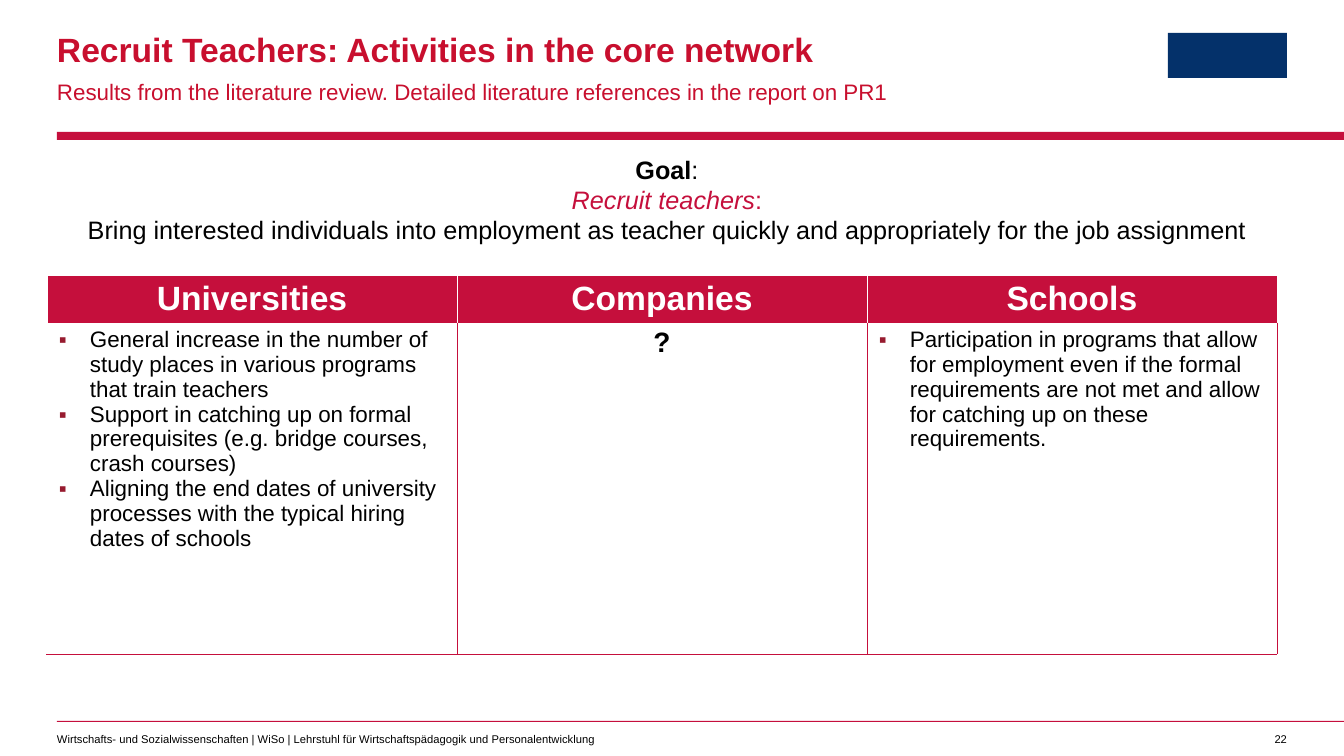
"""Build the slide on recruiting teachers in the core network."""
from dataclasses import dataclass

from lxml.etree import SubElement
from pptx import Presentation
from pptx.dml.color import RGBColor
from pptx.enum.shapes import MSO_SHAPE
from pptx.enum.text import MSO_ANCHOR, PP_ALIGN
from pptx.oxml.ns import qn
from pptx.util import Emu, Pt

RED = RGBColor(0xC5, 0x0F, 0x3C)
TITLE_RED = RGBColor(0xC8, 0x0F, 0x2E)
BULLET_RED = RGBColor(0x97, 0x1B, 0x2F)
NAVY = RGBColor(0x04, 0x31, 0x6A)
BLACK = RGBColor(0, 0, 0)
WHITE = RGBColor(0xFF, 0xFF, 0xFF)
FONT = "Arial"


@dataclass(frozen=True)
class Box:
    left: int
    top: int
    width: int
    height: int


@dataclass(frozen=True)
class Bar:
    box: Box
    color: RGBColor


@dataclass(frozen=True)
class Run:
    text: str
    size: int
    color: RGBColor = BLACK
    bold: bool = False
    italic: bool = False


@dataclass(frozen=True)
class Column:
    heading: str
    items: tuple[str, ...]
    bulleted: bool = True


@dataclass(frozen=True)
class Border:
    side: str
    color: RGBColor
    width: float


BARS = (
    Bar(Box(57, 132, 1287, 8), RED),
    Bar(Box(57, 721, 1287, 1), RED),
    Bar(Box(1168, 33, 119, 45), NAVY),
)
COLUMNS = (
    Column("Universities", (
        "General increase in the number of study places in various programs that train teachers",
        "Support in catching up on formal prerequisites (e.g. bridge courses, crash courses)",
        "Aligning the end dates of university processes with the typical hiring dates of schools",
    )),
    Column("Companies", ("?",), bulleted=False),
    Column("Schools", (
        "Participation in programs that allow for employment even if the formal requirements "
        "are not met and allow for catching up on these requirements.",
    )),
)
GOAL = (
    (Run("Goal", 18, bold=True), Run(":", 18)),
    (Run("Recruit teachers", 18, RED, italic=True), Run(":", 18, RED)),
)
GOAL_TEXT = Run("Bring interested individuals into employment as teacher quickly "
                "and appropriately for the job assignment", 18)
HEADER_BORDERS = (Border("L", WHITE, 0.5), Border("R", WHITE, 0.5), Border("T", WHITE, 1))


def px(n: int) -> Emu:
    """Turn pixels into EMU."""
    return Emu(round(n * 914400 / 100.8))


def place(box: Box) -> tuple[Emu, Emu, Emu, Emu]:
    """Give the box in EMU."""
    return px(box.left), px(box.top), px(box.width), px(box.height)


def add_run(p, run: Run) -> None:
    """Add one formatted run to a paragraph."""
    r = p.add_run()
    r.text = run.text
    font = r.font
    font.name, font.size = FONT, Pt(run.size)
    font.bold, font.italic = run.bold, run.italic
    font.color.rgb = run.color


def set_margins(tf, left: int = 0, top: int = 0, right: int = 0, bottom: int = 0) -> None:
    """Set the insets of a text frame or cell."""
    tf.margin_left, tf.margin_top = px(left), px(top)
    tf.margin_right, tf.margin_bottom = px(right), px(bottom)


def add_text(slide, box: Box, run: Run, right: int = 0, align=PP_ALIGN.LEFT):
    """Add a one-line text box and return its paragraph."""
    tf = slide.shapes.add_textbox(*place(box)).text_frame
    tf.word_wrap = True
    set_margins(tf, right=right)
    p = tf.paragraphs[0]
    p.alignment = align
    add_run(p, run)
    return p


def add_bar(slide, bar: Bar) -> None:
    """Add a plain filled rectangle."""
    sp = slide.shapes.add_shape(MSO_SHAPE.RECTANGLE, *place(bar.box))
    sp.shadow.inherit = False
    sp.fill.solid()
    sp.fill.fore_color.rgb = bar.color
    sp.line.fill.background()


def add_bullet(p) -> None:
    """Give a paragraph a hanging square bullet."""
    pPr = p._p.get_or_add_pPr()
    pPr.set("marL", str(px(31)))
    pPr.set("indent", str(-px(31)))
    color = SubElement(pPr, qn("a:buClr"))
    SubElement(color, qn("a:srgbClr"), val=str(BULLET_RED))
    SubElement(pPr, qn("a:buFont"), typeface=FONT)
    SubElement(pPr, qn("a:buChar"), char="▪")


def set_borders(cell, borders: tuple[Border, ...]) -> None:
    """Draw the borders of a cell, given in the order L, R, T, B."""
    tcPr = cell._tc.get_or_add_tcPr()
    for i, border in enumerate(borders):
        ln = SubElement(tcPr, qn(f"a:ln{border.side}"), w=str(Pt(border.width)))
        fill = SubElement(ln, qn("a:solidFill"))
        SubElement(fill, qn("a:srgbClr"), val=str(border.color))
        tcPr.insert(i, ln)


def add_activities(slide, box: Box, header_height: int) -> None:
    """Add the table of activities by actor."""
    table = slide.shapes.add_table(2, len(COLUMNS), *place(box)).table
    table.horz_banding = False
    table.rows[0].height = px(header_height)
    table.rows[1].height = px(box.height - header_height)
    for i, column in enumerate(COLUMNS):
        table.columns[i].width = px(box.width // len(COLUMNS))
        head, body = table.cell(0, i), table.cell(1, i)
        for cell in (head, body):
            set_margins(cell, 12, 4, 12, 4)
        head.vertical_anchor = MSO_ANCHOR.MIDDLE
        head.fill.solid()
        head.fill.fore_color.rgb = RED
        set_borders(head, HEADER_BORDERS)
        p = head.text_frame.paragraphs[0]
        p.alignment = PP_ALIGN.CENTER
        add_run(p, Run(column.heading, 24, WHITE, bold=True))
        body.fill.background()
        left = Border("L", RED, 0.25) if i else Border("L", WHITE, 1)
        set_borders(body, (left, Border("R", RED, 0.25), Border("B", RED, 0.25)))
        tf = body.text_frame
        for j, item in enumerate(column.items):
            p = tf.add_paragraph() if j else tf.paragraphs[0]
            if column.bulleted:
                add_bullet(p)
                add_run(p, Run(item, 16))
            else:
                p.alignment = PP_ALIGN.CENTER
                add_run(p, Run(item, 20, bold=True))


def main() -> None:
    """Build and save the slide."""
    prs = Presentation()
    prs.slide_width, prs.slide_height = px(1344), px(756)
    slide = prs.slides.add_slide(prs.slide_layouts[5])
    for bar in BARS:
        add_bar(slide, bar)

    title = slide.shapes.title
    title.left, title.top, title.width, title.height = place(Box(57, 33, 905, 74))
    tf = title.text_frame
    tf.word_wrap = True
    tf.vertical_anchor = MSO_ANCHOR.TOP
    set_margins(tf)
    p = tf.paragraphs[0]
    p.alignment, p.line_spacing = PP_ALIGN.LEFT, 0.9
    add_run(p, Run("Recruit Teachers: Activities in the core network", 24, TITLE_RED, bold=True))

    subtitle = Run("Results from the literature review. Detailed literature references "
                   "in the report on PR1", 16, TITLE_RED)
    add_text(slide, Box(57, 76, 940, 27), subtitle, right=39).line_spacing = 1.1
    footer = Run("Wirtschafts- und Sozialwissenschaften | WiSo | Lehrstuhl für "
                 "Wirtschaftspädagogik und Personalentwicklung", 8)
    add_text(slide, Box(57, 732, 603, 13), footer)
    add_text(slide, Box(1266, 732, 21, 13), Run("22", 8), align=PP_ALIGN.RIGHT)

    add_activities(slide, Box(47, 275, 1230, 377), 46)

    tf = slide.shapes.add_textbox(*place(Box(57, 149, 1220, 102))).text_frame
    tf.word_wrap = True
    for i, runs in enumerate(GOAL):
        p = tf.add_paragraph() if i else tf.paragraphs[0]
        p.alignment = PP_ALIGN.CENTER
        for run in runs:
            add_run(p, run)
    p.add_line_break()
    add_run(p, GOAL_TEXT)
    prs.save("out.pptx")


if __name__ == "__main__":
    main()
